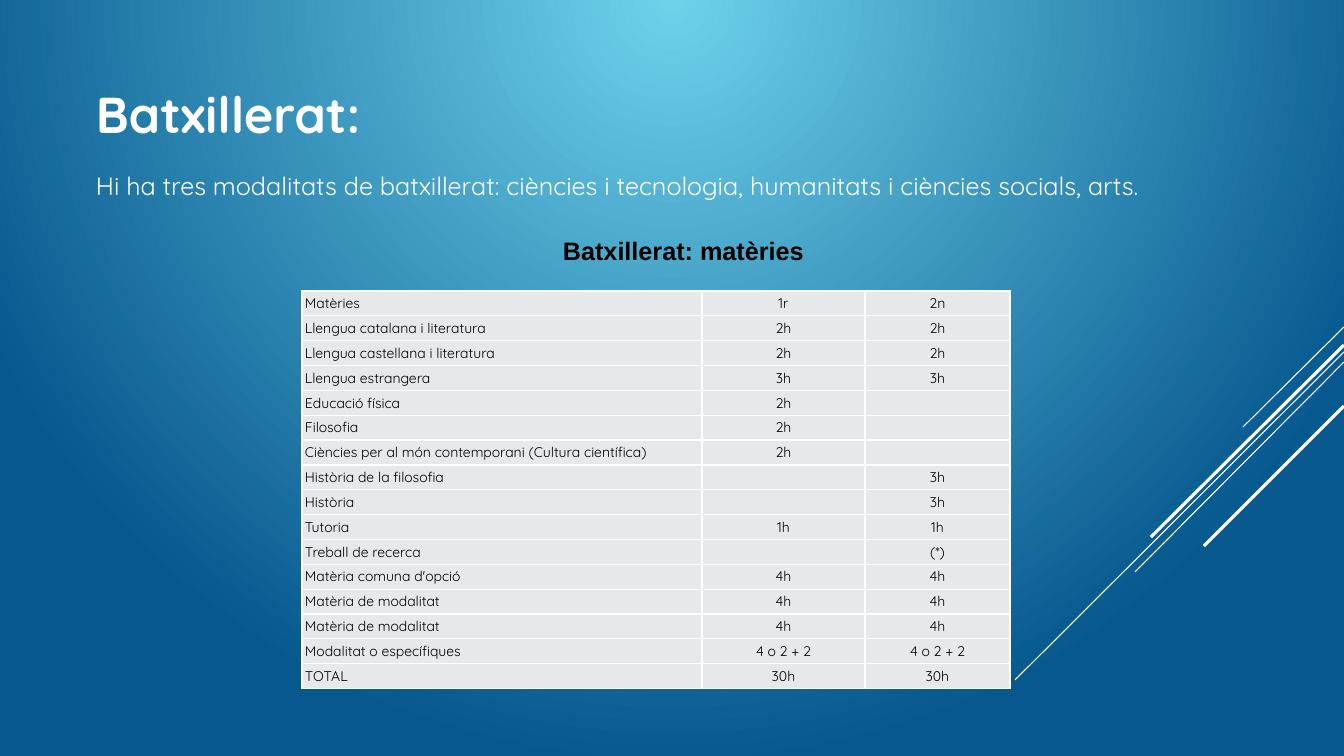
from lxml.etree import SubElement
from pptx import Presentation
from pptx.dml.color import RGBColor
from pptx.enum.shapes import MSO_CONNECTOR
from pptx.enum.text import MSO_ANCHOR, PP_ALIGN
from pptx.oxml import parse_xml
from pptx.oxml.ns import nsdecls, qn
from pptx.util import Emu, Pt

SLIDE_WIDTH, SLIDE_HEIGHT = 1344, 756
EMU_PER_PX = 12192000 / SLIDE_WIDTH

WHITE = RGBColor(0xFF, 0xFF, 0xFF)
BLACK = RGBColor(0x00, 0x00, 0x00)
LIGHT_BLUE = RGBColor(0x6E, 0xD2, 0xEB)
DARK_BLUE = RGBColor(0x06, 0x58, 0x8E)
CELL_GREY = RGBColor(0xE7, 0xE8, 0xEA)

SUBJECTS = [
    ("Matèries", "1r", "2n"),
    ("Llengua catalana i literatura", "2h", "2h"),
    ("Llengua castellana i literatura", "2h", "2h"),
    ("Llengua estrangera", "3h", "3h"),
    ("Educació física", "2h", ""),
    ("Filosofia", "2h", ""),
    ("Ciències per al món contemporani (Cultura científica)", "2h", ""),
    ("Història de la filosofia", "", "3h"),
    ("Història", "", "3h"),
    ("Tutoria", "1h", "1h"),
    ("Treball de recerca", "", "(*)"),
    ("Matèria comuna d'opció", "4h", "4h"),
    ("Matèria de modalitat", "4h", "4h"),
    ("Matèria de modalitat", "4h", "4h"),
    ("Modalitat o específiques", "4 o 2 + 2", "4 o 2 + 2"),
    ("TOTAL", "30h", "30h"),
]

# Start x, y, end x, y and weight in points
DIAGONALS = [
    (1344, 327, 1243, 427, 0.75),
    (1344, 352, 1015, 680, 0.75),
    (1344, 362, 1135, 572, 0.75),
    (1344, 345, 1151, 537, 2.25),
    (1344, 406, 1204, 546, 2.25),
]


def px(length):
    return Emu(round(length * EMU_PER_PX))


def write(paragraph, text, *, size=18, font="Quicksand", color=WHITE,
          bold=False, align=PP_ALIGN.LEFT, before=0):
    paragraph.alignment = align
    paragraph.space_before = Pt(before)
    if not text:
        paragraph._p.get_or_add_endParaRPr().set("sz", str(size * 100))
        return
    run = paragraph.add_run()
    run.text = text
    run.font.size = Pt(size)
    run.font.name = font
    run.font.bold = bold
    run.font.color.rgb = color


class SlideBuilder:
    def __init__(self, presentation):
        self.slide = presentation.slides.add_slide(presentation.slide_layouts[6])
        self.shapes = self.slide.shapes

    def radial_background(self, inner, outer):
        fill = self.slide.background.fill
        fill.gradient()
        for stop, color, position in zip(fill.gradient_stops, (inner, outer), (0, 1)):
            stop.color.rgb = color
            stop.position = position
        gradient = self.slide.background._cSld.find(".//" + qn("a:gradFill"))
        gradient.replace(gradient.find(qn("a:lin")), parse_xml(
            f'<a:path {nsdecls("a")} path="circle">'
            '<a:fillToRect l="0" t="0" r="0" b="100000"/></a:path>'))

    def line(self, x1, y1, x2, y2, weight):
        connector = self.shapes.add_connector(
            MSO_CONNECTOR.STRAIGHT, px(x1), px(y1), px(x2), px(y2))
        connector.line.color.rgb = WHITE
        connector.line.width = Pt(weight)
        SubElement(connector._element.spPr, qn("a:effectLst"))

    def text_box(self, left, top, width, height, anchor=MSO_ANCHOR.TOP):
        shape = self.shapes.add_textbox(px(left), px(top), px(width), px(height))
        frame = shape.text_frame
        frame.word_wrap = True
        frame.vertical_anchor = anchor
        return frame

    def table(self, left, top, height, widths, rows):
        shape = self.shapes.add_table(len(rows), len(widths), px(left), px(top),
                                      px(sum(widths)), px(height))
        table = shape.table
        table.first_row = table.horz_banding = False
        for column, width in zip(table.columns, widths):
            column.width = px(width)
        for r, row in enumerate(rows):
            for c, text in enumerate(row):
                self.cell(table.cell(r, c), text,
                          PP_ALIGN.CENTER if c else PP_ALIGN.LEFT)

    def cell(self, cell, text, align):
        cell.margin_left = cell.margin_right = px(3)
        cell.margin_top = cell.margin_bottom = px(3)
        cell.vertical_anchor = MSO_ANCHOR.MIDDLE
        write(cell.text_frame.paragraphs[0], text, size=10, color=BLACK, align=align)
        properties = cell._tc.get_or_add_tcPr()
        for side in ("lnL", "lnR", "lnT", "lnB"):
            border = SubElement(properties, qn(f"a:{side}"), w=str(Pt(1)))
            solid = SubElement(border, qn("a:solidFill"))
            SubElement(solid, qn("a:srgbClr"), val=str(WHITE))
        cell.fill.solid()
        cell.fill.fore_color.rgb = CELL_GREY


def main():
    presentation = Presentation()
    presentation.slide_width = px(SLIDE_WIDTH)
    presentation.slide_height = px(SLIDE_HEIGHT)
    builder = SlideBuilder(presentation)

    # Background and diagonal lines
    builder.radial_background(LIGHT_BLUE, DARK_BLUE)
    for diagonal in DIAGONALS:
        builder.line(*diagonal)

    # Title and introduction
    heading = builder.text_box(86, 47, 1131, 163)
    heading.margin_top = px(36)
    write(heading.paragraphs[0], "Batxillerat:", size=36, bold=True)
    write(heading.add_paragraph(),
          "Hi ha tres modalitats de batxillerat: ciències i tecnologia, "
          "humanitats i ciències socials, arts.", before=19)

    # Subjects table with its caption
    builder.table(302, 291, 398, (400, 163, 145), SUBJECTS)
    caption = builder.text_box(553, 230, 268, 40, MSO_ANCHOR.MIDDLE)
    caption.margin_top = caption.margin_bottom = 0
    caption.paragraphs[0].line_spacing = 1
    write(caption.paragraphs[0], "Batxillerat: matèries", font="Arial",
          color=BLACK, bold=True)

    presentation.save("out.pptx")


if __name__ == "__main__":
    main()
